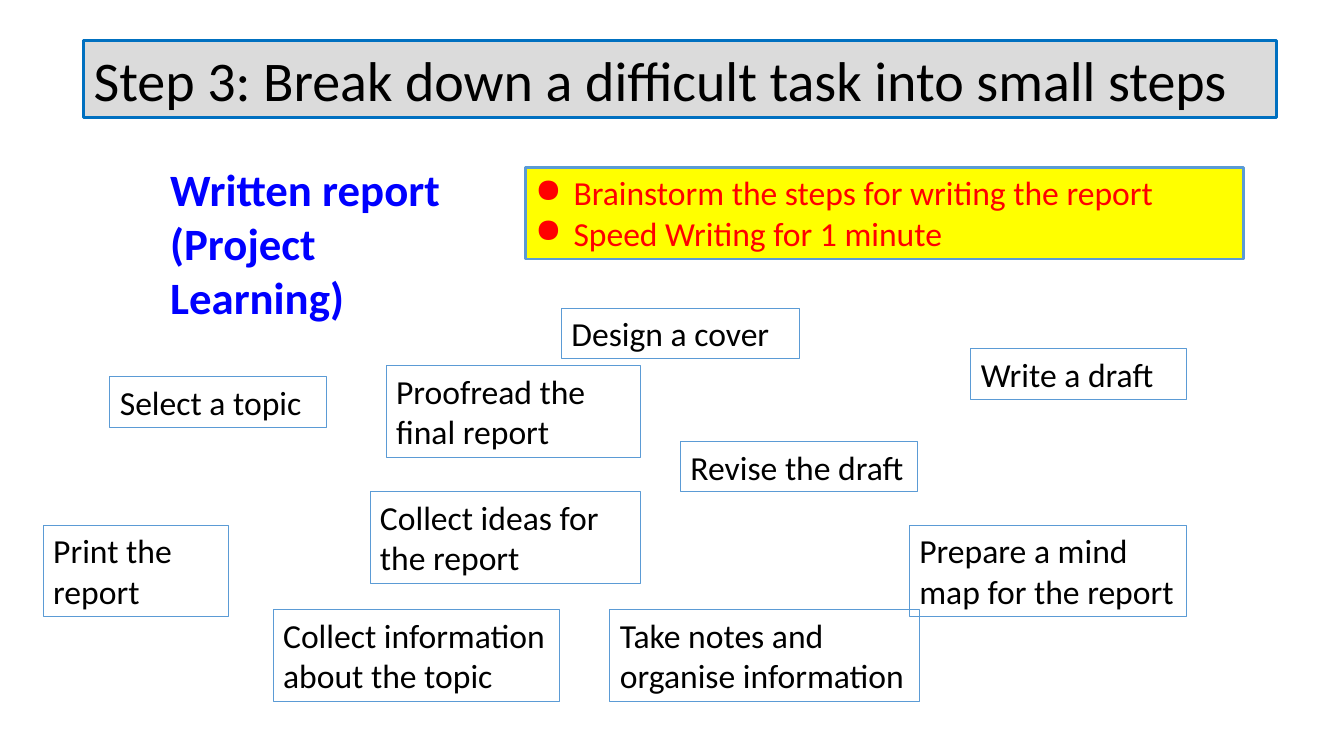
from dataclasses import dataclass

from lxml.etree import SubElement
from pptx import Presentation
from pptx.dml.color import RGBColor
from pptx.enum.shapes import MSO_SHAPE as Preset
from pptx.enum.text import MSO_ANCHOR as Anchor, MSO_AUTO_SIZE as AutoSize, PP_ALIGN as Align
from pptx.oxml.ns import qn
from pptx.util import Emu, Pt

EMU_PER_PX = 9144  # 100 px to the inch
BULLET_INDENT = 38
STEP_HEIGHTS = {1: 50, 2: 91}  # by number of text lines


@dataclass(frozen=True)
class Theme:
    font: str = "Calibri"
    black: str = "000000"
    red: str = "FF0000"
    blue: str = "0000FF"
    yellow: str = "FFFF00"
    gray: str = "DBDBDB"
    title_line: str = "0070C0"
    box_line: str = "5B9BD5"
    title_size: int = 40
    topic_size: int = 32
    body_size: int = 24
    thick: float = 2
    thin: float = 0.75


THEME = Theme()

# left, top, width, lines, text
STEPS = [
    (383, 363, 252, 2, "Proofread the final report"),
    (557, 306, 236, 1, "Design a cover"),
    (43, 521, 184, 2, "Print the report"),
    (675, 438, 235, 1, "Revise the draft"),
    (963, 346, 214, 1, "Write a draft"),
    (367, 488, 268, 2, "Collect ideas for the report"),
    (902, 521, 275, 2, "Prepare a mind map for the report"),
    (605, 605, 307, 2, "Take notes and organise information"),
    (271, 605, 284, 2, "Collect information about the topic"),
    (109, 374, 215, 1, "Select a topic"),
]


def px(length):
    return Emu(length * EMU_PER_PX)


def color(value):
    return RGBColor.from_string(value)


def write(shape, text, size, font_color, bold=False):
    frame = shape.text_frame
    frame.text = text
    frame.word_wrap = True
    frame.auto_size = AutoSize.SHAPE_TO_FIT_TEXT
    frame.vertical_anchor = Anchor.TOP
    for paragraph in frame.paragraphs:
        paragraph.alignment = Align.LEFT
        for run in paragraph.runs:
            run.font.name = THEME.font
            run.font.size = Pt(size)
            run.font.bold = bold
            run.font.color.rgb = color(font_color)


def add_box(slide, bounds, line, line_width, fill=None):
    """Add an outlined rectangle, see-through when no fill is given."""
    shape = slide.shapes.add_shape(Preset.RECTANGLE, *map(px, bounds))
    shape.shadow.inherit = False
    if fill:
        shape.fill.solid()
        shape.fill.fore_color.rgb = color(fill)
    else:
        shape.fill.background()
    shape.line.color.rgb = color(line)
    shape.line.width = Pt(line_width)
    return shape


def add_bullets(shape):
    for paragraph in shape.text_frame.paragraphs:
        properties = paragraph._p.get_or_add_pPr()
        properties.set("marL", str(px(BULLET_INDENT)))
        properties.set("indent", str(px(-BULLET_INDENT)))
        SubElement(properties, qn("a:buChar"), char="●")


def add_title(slide):
    title = add_box(slide, (83, 40, 1183, 77), THEME.title_line, THEME.thick, THEME.gray)
    write(title, "Step 3: Break down a difficult task into small steps",
          THEME.title_size, THEME.black)


def add_topic(slide):
    topic = slide.shapes.add_textbox(*map(px, (159, 156, 333, 118)))
    write(topic, "Written report (Project Learning)", THEME.topic_size, THEME.blue, bold=True)


def add_instructions(slide):
    box = add_box(slide, (521, 166, 712, 91), THEME.box_line, THEME.thick, THEME.yellow)
    write(box, "Brainstorm the steps for writing the report\nSpeed Writing for 1 minute",
          THEME.body_size, THEME.red)
    add_bullets(box)


def add_step(slide, left, top, width, lines, text):
    bounds = (left, top, width, STEP_HEIGHTS[lines])
    step = add_box(slide, bounds, THEME.box_line, THEME.thin)
    write(step, text, THEME.body_size, THEME.black)


def main():
    presentation = Presentation()
    presentation.slide_width, presentation.slide_height = px(1333), px(750)
    slide = presentation.slides.add_slide(presentation.slide_layouts[6])
    add_title(slide)
    add_topic(slide)
    add_instructions(slide)
    for step in STEPS:
        add_step(slide, *step)
    presentation.save("out.pptx")


if __name__ == "__main__":
    main()
